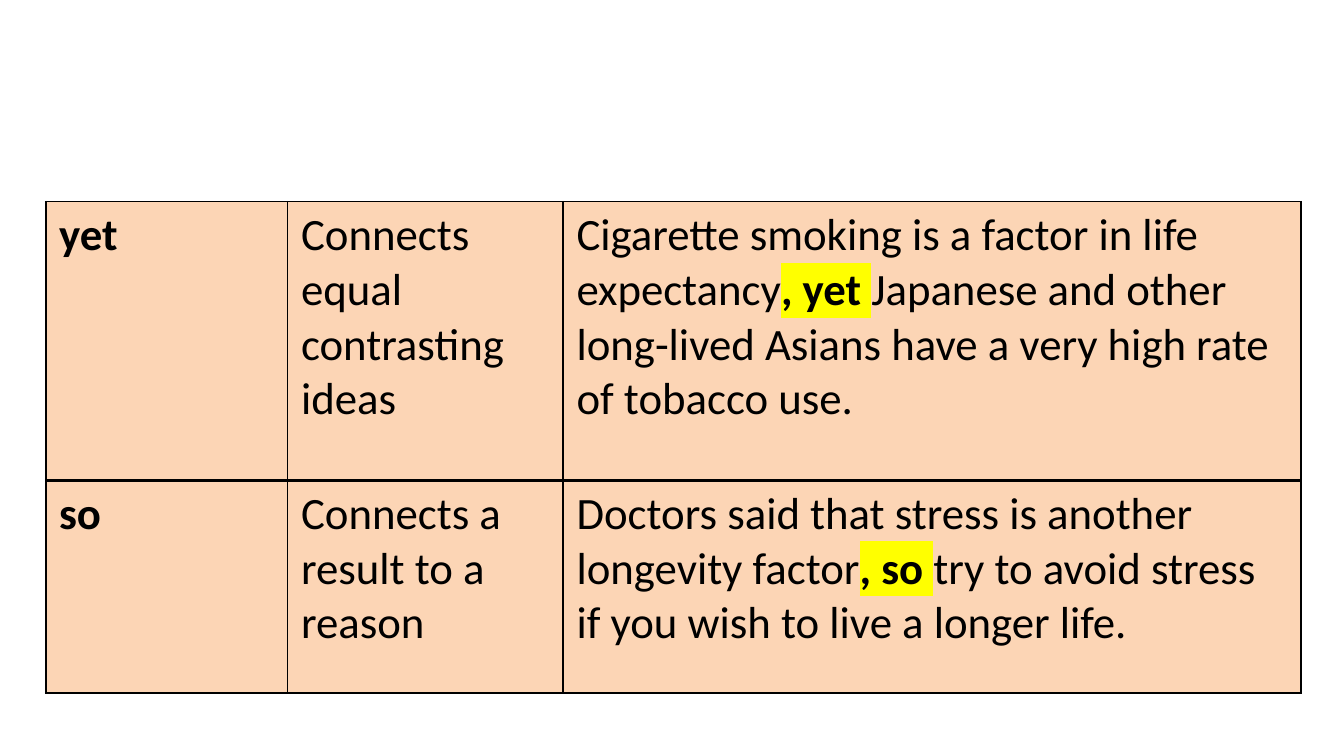
import pptx
import pptx.util
import pptx.dml.color
import pptx.oxml
import pptx.oxml.ns
from lxml import etree

PEACH = pptx.dml.color.RGBColor(0xFC, 0xD5, 0xB5)
BLACK = pptx.dml.color.RGBColor(0x00, 0x00, 0x00)
YELLOW = pptx.dml.color.RGBColor(0xFF, 0xFF, 0x00)

SLIDE_WIDTH = pptx.util.Inches(10)
SLIDE_HEIGHT = SLIDE_WIDTH * 9 // 16
COLUMN_WEIGHTS = [1.8, 2.05, 5.49]
ROW_WEIGHTS = [2.07, 1.58]
BOTTOM_BORDERS = [2, 1]

CONJUNCTIONS = [
    ("yet", "Connects equal contrasting ideas",
     ["Cigarette smoking is a factor in life expectancy", ", yet ",
      "Japanese and other long-lived Asians have a very high rate of tobacco use."]),
    ("so", "Connects a result to a reason",
     ["Doctors said that stress is another longevity factor", ", so ",
      "try to avoid stress if you wish to live a longer life."]),
]


def add_color(parent, color):
    etree.SubElement(parent, pptx.oxml.ns.qn("a:srgbClr"), val=str(color))


def set_borders(cell, widths):
    properties = cell._tc.get_or_add_tcPr()
    for index, (side, width) in enumerate(widths.items()):
        line = etree.Element(pptx.oxml.ns.qn(f"a:ln{side}"), w=str(pptx.util.Pt(width)))
        add_color(etree.SubElement(line, pptx.oxml.ns.qn("a:solidFill")), BLACK)
        properties.insert(index, line)


def highlight(span):
    span.font.bold = True
    properties = span._r.get_or_add_rPr()
    add_color(etree.SubElement(properties, pptx.oxml.ns.qn("a:highlight")), YELLOW)


def write_cell(cell, texts, bold):
    para = cell.text_frame.paragraphs[0]
    para.font.name = "Calibri"
    para.font.size = pptx.util.Pt(24)
    para.font.color.rgb = BLACK
    para.font.bold = bold
    for index, text in enumerate(texts):
        span = para.add_run()
        span.text = text
        if index == 1:
            highlight(span)


def add_conjunction_table(page, left, top, width, height):
    frame = page.shapes.add_table(
        len(ROW_WEIGHTS), len(COLUMN_WEIGHTS), left, top, width, height)
    table = frame.table
    table.first_row = False
    table.horz_banding = False
    for column, weight in zip(table.columns, COLUMN_WEIGHTS):
        column.width = int(width * weight / sum(COLUMN_WEIGHTS))
    for row, weight in zip(table.rows, ROW_WEIGHTS):
        row.height = int(height * weight / sum(ROW_WEIGHTS))

    for row_index, (word, purpose, example) in enumerate(CONJUNCTIONS):
        for column_index, texts in enumerate([[word], [purpose], example]):
            cell = table.cell(row_index, column_index)
            cell.fill.solid()
            cell.fill.fore_color.rgb = PEACH
            set_borders(cell, {"L": 1, "R": 1, "T": 1, "B": BOTTOM_BORDERS[row_index]})
            write_cell(cell, texts, bold=column_index == 0)


def main():
    deck = pptx.Presentation()
    deck.slide_width = SLIDE_WIDTH
    deck.slide_height = SLIDE_HEIGHT
    page = deck.slides.add_slide(deck.slide_layouts[6])
    add_conjunction_table(
        page,
        left=int(SLIDE_WIDTH * 0.034),
        top=int(SLIDE_HEIGHT * 4 / 15),
        width=int(SLIDE_WIDTH * 0.934),
        height=int(SLIDE_HEIGHT * 0.65))
    deck.save("out.pptx")


if __name__ == "__main__":
    main()
